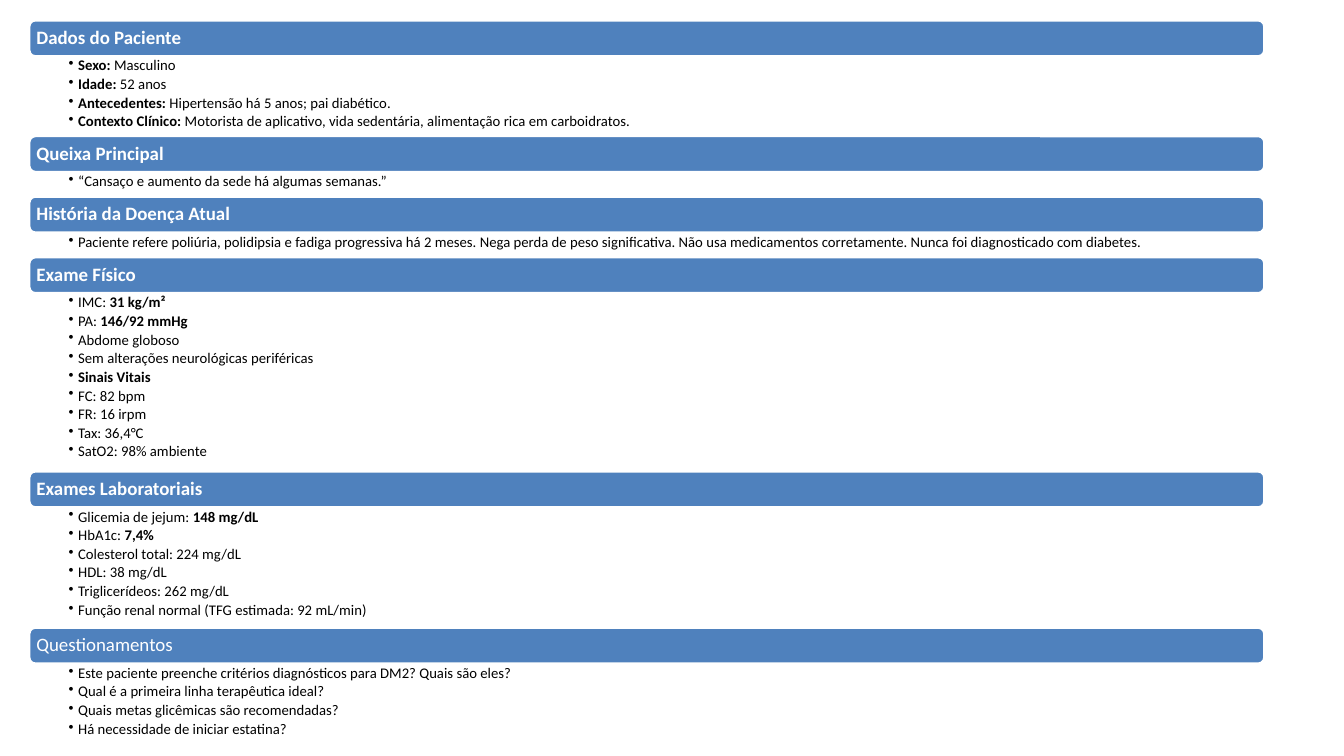
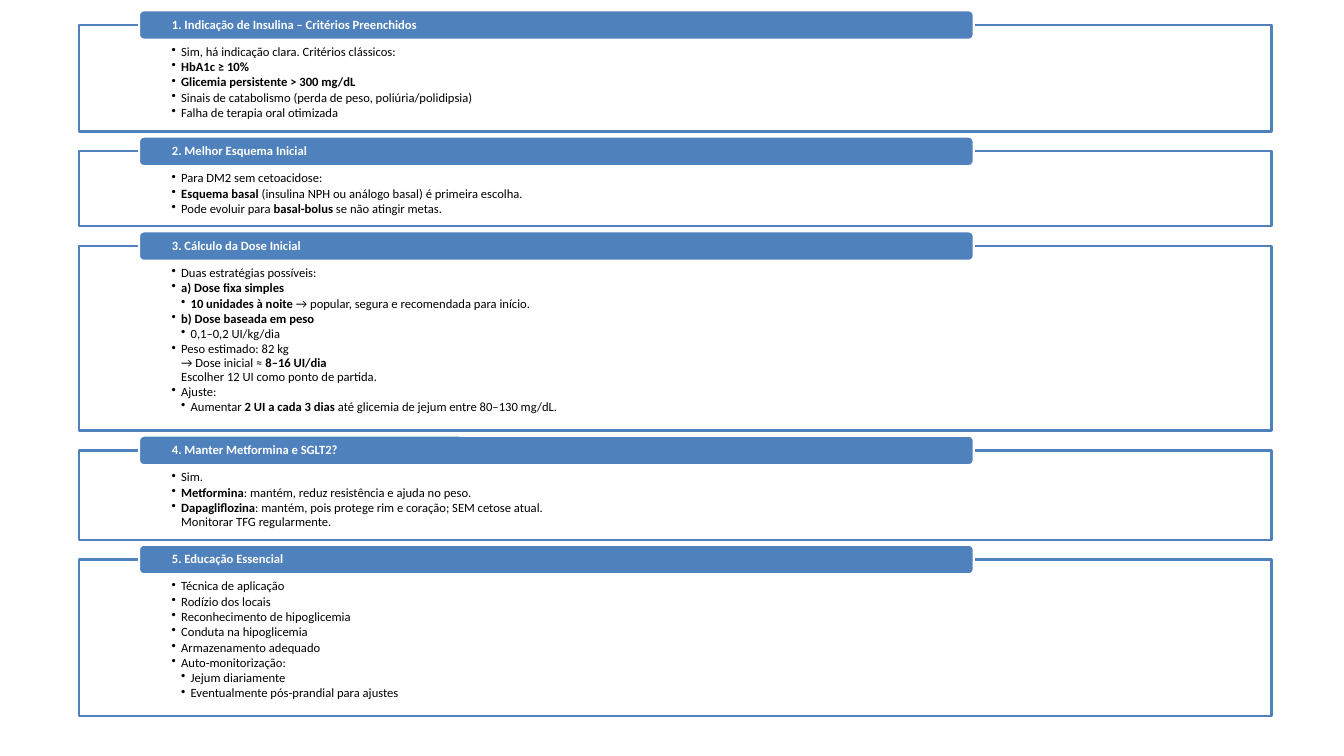
from dataclasses import dataclass

from lxml.etree import SubElement
from pptx import Presentation
from pptx.dml.color import RGBColor
from pptx.enum.shapes import MSO_SHAPE as Kind
from pptx.enum.text import MSO_ANCHOR as Anchor, PP_ALIGN as Align
from pptx.oxml.ns import qn
from pptx.shapes.autoshape import Shape
from pptx.slide import Slide
from pptx.util import Pt

BLUE = RGBColor(0x4F, 0x81, 0xBD)
WHITE = RGBColor(0xFF, 0xFF, 0xFF)
BLACK = RGBColor(0x00, 0x00, 0x00)
FONT = "Calibri"
STEP = 9

Inset = tuple[float, float, float, float]


@dataclass(frozen=True)
class Part:
    """A heading, the height of its body and the body lines."""

    title: str
    height: float
    lines: tuple[str, ...]
    bold: bool = True


@dataclass(frozen=True)
class Style:
    """Text size, gap after each line and insets of a body or a heading."""

    size: float
    gap: float
    inset: Inset


BAND = Style(18, 0, (5, 5, 5, 5))
LIST = Style(14, 2.6, (37.4, 2, 10, 2))
TAB = Style(12, 0, (30, 0, 30, 0))
PANEL = Style(12, 1.6, (88, 19.6, 88, 6.5))

CASE = (
    Part("Dados do Paciente", 76.2, (
        "**Sexo:** Masculino",
        "**Idade:** 52 anos",
        "**Antecedentes:** Hipertensão há 5 anos; pai diabético.",
        "**Contexto Clínico:** Motorista de aplicativo, vida sedentária, "
        "alimentação rica em carboidratos.",
    )),
    Part("Queixa Principal", 23.7, (
        "“Cansaço e aumento da sede há algumas semanas.”",
    )),
    Part("História da Doença Atual", 23.7, (
        "Paciente refere poliúria, polidipsia e fadiga progressiva há 2 meses. "
        "Nega perda de peso significativa. Não usa medicamentos corretamente. "
        "Nunca foi diagnosticado com diabetes.",
    )),
    Part("Exame Físico", 170, (
        "IMC: **31 kg/m²**",
        "PA: **146/92 mmHg**",
        "Abdome globoso",
        "Sem alterações neurológicas periféricas",
        "**Sinais Vitais**",
        "FC: 82 bpm",
        "FR: 16 irpm",
        "Tax: 36,4°C",
        "SatO2: 98% ambiente",
    )),
    Part("Exames Laboratoriais", 114.8, (
        "Glicemia de jejum: **148 mg/dL**",
        "HbA1c: **7,4%**",
        "Colesterol total: 224 mg/dL",
        "HDL: 38 mg/dL",
        "Triglicerídeos: 262 mg/dL",
        "Função renal normal (TFG estimada: 92 mL/min)",
    )),
    Part("Questionamentos", 76.2, (
        "Este paciente preenche critérios diagnósticos para DM2? Quais são eles?",
        "Qual é a primeira linha terapêutica ideal?",
        "Quais metas glicêmicas são recomendadas?",
        "Há necessidade de iniciar estatina?",
    ), bold=False),
)

PLAN = (
    Part("1. Indicação de Insulina – Critérios Preenchidos", 101.5, (
        "Sim, há indicação clara. Critérios clássicos:",
        "**HbA1c ≥ 10%**",
        "**Glicemia persistente > 300 mg/dL**",
        "Sinais de catabolismo (perda de peso, poliúria/polidipsia)",
        "Falha de terapia oral otimizada",
    )),
    Part("2. Melhor Esquema Inicial", 71.3, (
        "Para DM2 sem cetoacidose:",
        "**Esquema basal** (insulina NPH ou análogo basal) é primeira escolha.",
        "Pode evoluir para **basal-bolus** se não atingir metas.",
    )),
    Part("3. Cálculo da Dose Inicial", 175.7, (
        "Duas estratégias possíveis:",
        "**a) Dose fixa simples**",
        "- **10 unidades à noite** → popular, segura e recomendada para início.",
        "**b) Dose baseada em peso**",
        "- 0,1–0,2 UI/kg/dia",
        "Peso estimado: 82 kg\n→ Dose inicial ≈ **8–16 UI/dia**\n"
        "Escolher 12 UI como ponto de partida.",
        "Ajuste:",
        "- Aumentar **2 UI a cada 3 dias** até glicemia de jejum entre 80–130 mg/dL.",
    )),
    Part("4. Manter Metformina e SGLT2?", 85, (
        "Sim.",
        "**Metformina**: mantém, reduz resistência e ajuda no peso.",
        "**Dapagliflozina**: mantém, pois protege rim e coração; SEM cetose atual.\n"
        "Monitorar TFG regularmente.",
    )),
    Part("5. Educação Essencial", 149, (
        "Técnica de aplicação",
        "Rodízio dos locais",
        "Reconhecimento de hipoglicemia",
        "Conduta na hipoglicemia",
        "Armazenamento adequado",
        "Auto-monitorização:",
        "- Jejum diariamente",
        "- Eventualmente pós-prandial para ajustes",
    )),
)


def set_frame(shape: Shape, style: Style, anchor: Anchor) -> None:
    """Set the wrap, insets and anchor of a shape's text."""
    frame = shape.text_frame
    frame.word_wrap = True
    frame.vertical_anchor = anchor
    left, top, right, low = map(Pt, style.inset)
    frame.margin_left, frame.margin_top = left, top
    frame.margin_right, frame.margin_bottom = right, low


def set_font(para, style: Style, color: RGBColor, bold: bool = False) -> None:
    """Set spacing and font of one paragraph."""
    para.alignment = Align.LEFT
    para.line_spacing = 0.9
    para.space_after = Pt(style.gap)
    font = para.font
    font.name, font.size, font.bold = FONT, Pt(style.size), bold
    font.color.rgb = color


def add_runs(para, line: str) -> None:
    """Write a line, with bold between double stars."""
    for i, chunk in enumerate(line.split("**")):
        for j, text in enumerate(chunk.split("\n")):
            if j:
                para.add_line_break()
            if text:
                run = para.add_run()
                run.text = text
                if i % 2:
                    run.font.bold = True


def add_list(shape: Shape, lines: tuple[str, ...], style: Style) -> None:
    """Fill a shape with bullets; a leading dash marks the second level."""
    set_frame(shape, style, Anchor.TOP)
    frame = shape.text_frame
    for i, line in enumerate(lines):
        para = frame.add_paragraph() if i else frame.paragraphs[0]
        deep = line.startswith("- ")
        para.level = 2 if deep else 1
        props = para._p.get_or_add_pPr()
        props.set("marL", str(Pt(STEP * para.level)))
        props.set("indent", str(-Pt(STEP)))
        SubElement(props, qn("a:buChar"), char="•")
        set_font(para, style, BLACK)
        add_runs(para, line.removeprefix("- "))


def add_block(slide: Slide, kind: Kind, left: float, top: float, width: float,
              height: float, fill: RGBColor, edge: RGBColor) -> Shape:
    """Draw a filled shape with a two-point outline."""
    shape = slide.shapes.add_shape(kind, Pt(left), Pt(top), Pt(width), Pt(height))
    shape.shadow.inherit = False
    shape.fill.solid()
    shape.fill.fore_color.rgb = fill
    shape.line.color.rgb = edge
    shape.line.width = Pt(2)
    return shape


def add_head(slide: Slide, part: Part, left: float, top: float, width: float,
             height: float, style: Style) -> None:
    """Draw a rounded blue heading."""
    shape = add_block(slide, Kind.ROUNDED_RECTANGLE, left, top, width, height,
                      BLUE, WHITE)
    set_frame(shape, style, Anchor.MIDDLE)
    para = shape.text_frame.paragraphs[0]
    set_font(para, style, WHITE, part.bold)
    add_runs(para, part.title)


def draw_case(slide: Slide) -> None:
    """Stack full-width bands, each with its list below."""
    left, top, width, band = 28, 19.5, 1176, 34
    for part in CASE:
        add_head(slide, part, left, top, width, band, BAND)
        top += band
        body = slide.shapes.add_textbox(Pt(left), Pt(top), Pt(width), Pt(part.height))
        add_list(body, part.lines, LIST)
        top += part.height


def draw_plan(slide: Slide) -> None:
    """Stack outlined panels, each with a tab across its top edge."""
    left, top, width, gap, tab = 75.6, 23.8, 1135.4, 18.9, 28
    for part in PLAN:
        panel = add_block(slide, Kind.RECTANGLE, left, top, width, part.height,
                          WHITE, BLUE)
        add_list(panel, part.lines, PANEL)
        add_head(slide, part, left + 56.8, top - tab / 2, 795, tab, TAB)
        top += part.height + gap


def main() -> None:
    """Build both slides and save the deck."""
    deck = Presentation()
    deck.slide_width, deck.slide_height = Pt(1280), Pt(720)
    for draw in (draw_case, draw_plan):
        draw(deck.slides.add_slide(deck.slide_layouts[6]))
    deck.save("out.pptx")


if __name__ == "__main__":
    main()
